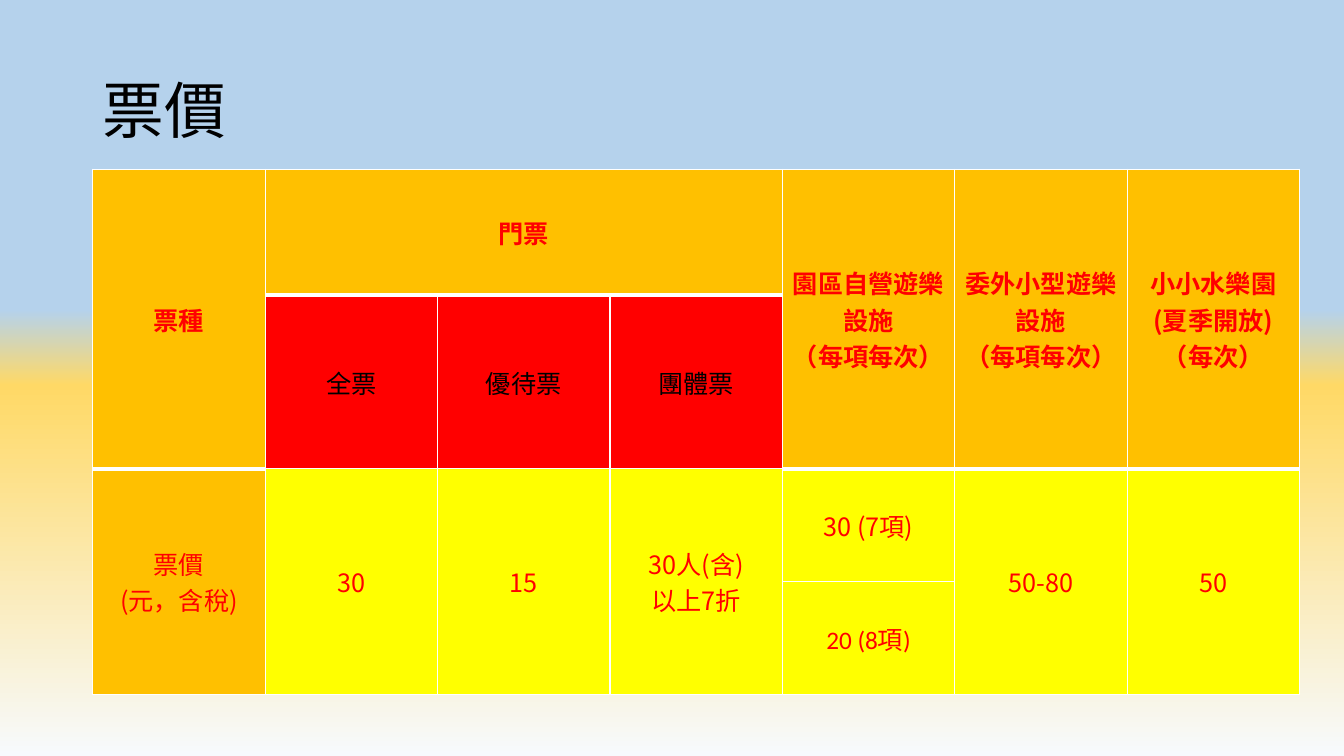
from lxml import etree
from pptx import Presentation
from pptx.dml.color import RGBColor
from pptx.enum import text
from pptx.oxml.ns import qn
from pptx.util import Inches, Pt

TITLE = "票價"
FONT = "Noto Sans CJK SC"
SKY = [(40, "B5D2EC"), (41, "B5D2EC"), (51, "FFD966"), (100, "F7FAFD")]
ORANGE, RED, YELLOW, BLACK, WHITE = "FFC000", "FF0000", "FFFF00", "000000", "FFFFFF"
COLUMNS, COLUMN_WIDTH = 7, 1.71
ROW_HEIGHTS = [1.25, 1.72, 1.12, 1.12]

HEADING = {"fill": ORANGE, "color": RED, "bold": True}
TICKET = {"fill": RED, "color": BLACK, "bold": False}
LABEL = {"fill": ORANGE, "color": RED, "bold": False}
PRICE = {"fill": YELLOW, "color": RED, "bold": False}

# row, column, rows spanned, columns spanned, wording, style
CELLS = [
    (0, 0, 2, 1, "票種", HEADING),
    (0, 1, 1, 3, "門票", HEADING),
    (0, 4, 2, 1, "園區自營遊樂設施\n（每項每次）", HEADING),
    (0, 5, 2, 1, "委外小型遊樂設施\n（每項每次）", HEADING),
    (0, 6, 2, 1, "小小水樂園\n(夏季開放)\n（每次）", HEADING),
    (1, 1, 1, 1, "全票", TICKET),
    (1, 2, 1, 1, "優待票", TICKET),
    (1, 3, 1, 1, "團體票", TICKET),
    (2, 0, 2, 1, "票價\n(元，含稅)", LABEL),
    (2, 1, 2, 1, "30", PRICE),
    (2, 2, 2, 1, "15", PRICE),
    (2, 3, 2, 1, "30人(含)\n以上7折", PRICE),
    (2, 4, 1, 1, "30 (7項)", PRICE),
    (2, 5, 2, 1, "50-80", PRICE),
    (2, 6, 2, 1, "50", PRICE),
    (3, 4, 1, 1, "20 (8項)", {**PRICE, "font": "Calibri"}),
]


def rgb(value):
    return RGBColor.from_string(value)


def format_para(para, size, color, bold=False, font=FONT):
    for span in para.runs:
        for name, value in {"name": font, "size": Pt(size), "bold": bold}.items():
            setattr(span.font, name, value)
        span.font.color.rgb = rgb(color)
        latin = span.font._element.find(qn("a:latin"))
        latin.addnext(latin.makeelement(qn("a:ea"), {"typeface": FONT}))


def add_color(parent, value):
    etree.SubElement(parent, qn("a:srgbClr"), val=value)


def paint_background(slide):
    fill = slide.background.fill
    fill.gradient()
    fill.gradient_angle = 270
    stops = slide.element.find(".//" + qn("a:gsLst"))
    for stop in list(stops):
        stops.remove(stop)
    for percent, color in SKY:
        add_color(etree.SubElement(stops, qn("a:gs"), pos=str(percent * 1000)), color)


def add_borders(cell, widths):
    """Draw white borders; widths maps the sides L, R, T, B to points."""
    properties = cell._tc.get_or_add_tcPr()
    for position, (side, width) in enumerate(widths.items()):
        line = etree.Element(qn("a:ln" + side), w=str(Pt(width)))
        add_color(etree.SubElement(line, qn("a:solidFill")), WHITE)
        properties.insert(position, line)


def fill_cell(table, row, column, rows, columns, wording, style):
    cell = table.cell(row, column)
    if rows * columns > 1:
        cell.merge(table.cell(row + rows - 1, column + columns - 1))
    for r in range(row, row + rows):
        for c in range(column, column + columns):
            part = table.cell(r, c)
            part.fill.solid()
            part.fill.fore_color.rgb = rgb(style["fill"])
            widths = {"L": 1, "R": 1}
            if r == 0:
                widths["T"] = 1
            widths["B"] = 3 if style is HEADING else 1
            add_borders(part, widths)
    for side in ("left", "right", "top", "bottom"):
        setattr(cell, "margin_" + side, Inches(0.03))
    cell.vertical_anchor = text.MSO_ANCHOR.MIDDLE
    para = cell.text_frame.paragraphs[0]
    para.text = wording
    para.alignment = text.PP_ALIGN.CENTER
    format_para(para, 18, style["color"], style["bold"], style.get("font", FONT))


def main():
    deck = Presentation()
    deck.slide_width, deck.slide_height = Inches(13.33), Inches(7.5)
    slide = deck.slides.add_slide(deck.slide_layouts[5])
    paint_background(slide)

    title = slide.shapes.title
    title.left, title.top = Inches(0.92), Inches(0.4)
    title.width, title.height = Inches(11.5), Inches(1.45)
    title.text_frame.vertical_anchor = text.MSO_ANCHOR.MIDDLE
    para = title.text_frame.paragraphs[0]
    para.text = TITLE
    para.alignment = text.PP_ALIGN.LEFT
    para.line_spacing = 0.9
    format_para(para, 44, BLACK)

    table = slide.shapes.add_table(
        len(ROW_HEIGHTS), COLUMNS, Inches(0.92), Inches(1.68),
        Inches(COLUMNS * COLUMN_WIDTH), Inches(sum(ROW_HEIGHTS))).table
    for column in table.columns:
        column.width = Inches(COLUMN_WIDTH)
    for row, height in zip(table.rows, ROW_HEIGHTS):
        row.height = Inches(height)
    for entry in CELLS:
        fill_cell(table, *entry)

    deck.save("out.pptx")


if __name__ == "__main__":
    main()
